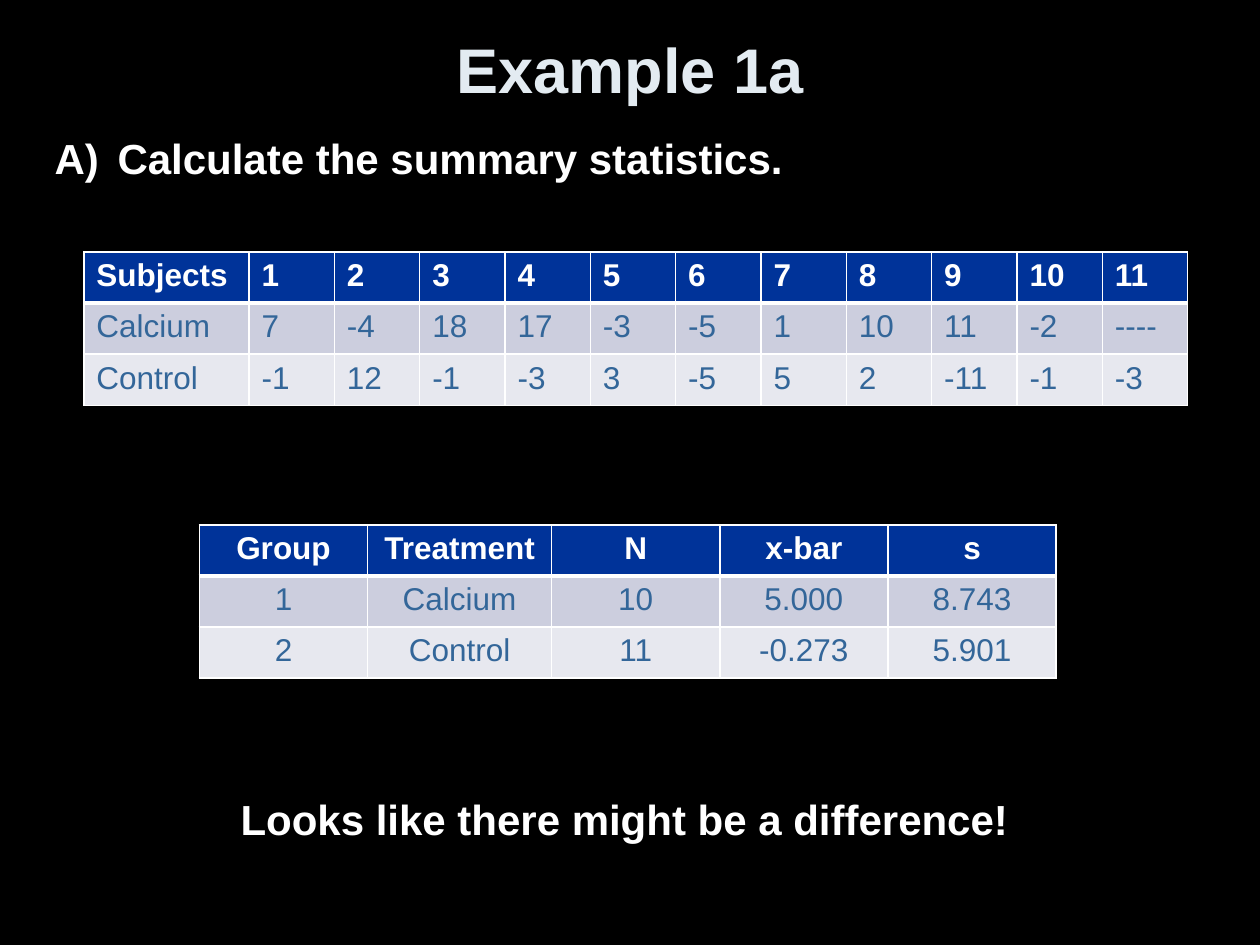
from dataclasses import dataclass

from lxml.etree import SubElement
from pptx import Presentation
from pptx.dml.color import RGBColor
from pptx.enum.text import MSO_ANCHOR as Anchor, MSO_AUTO_SIZE as AutoSize, PP_ALIGN as Align
from pptx.oxml.ns import qn
from pptx.util import Cm, Pt


@dataclass(frozen=True)
class Theme:
    font: str = "Arial"
    background: str = "000000"
    title: str = "E3EBF1"
    white: str = "FFFFFF"
    header_fill: str = "003399"
    body_text: str = "336699"
    bands: tuple = ("CCCEDE", "E7E8EF")
    title_size: int = 36
    text_size: int = 24
    table_size: int = 18
    border: int = 1
    header_rule: int = 3


@dataclass(frozen=True)
class TableSpec:
    left: float
    top: float
    widths: list
    rows: list
    align: Align


THEME = Theme()
ROW_HEIGHT = 1.03

TABLES = [
    TableSpec(1.69, 5.08, [3.33] + [1.72] * 11, [
        ["Subjects", *map(str, range(1, 12))],
        ["Calcium", "7", "-4", "18", "17", "-3", "-5", "1", "10", "11", "-2", "----"],
        ["Control", "-1", "12", "-1", "-3", "3", "-5", "5", "2", "-11", "-1", "-3"],
    ], Align.LEFT),
    TableSpec(4.02, 10.58, [3.39, 3.71, 3.39, 3.39, 3.39], [
        ["Group", "Treatment", "N", "x-bar", "s"],
        ["1", "Calcium", "10", "5.000", "8.743"],
        ["2", "Control", "11", "-0.273", "5.901"],
    ], Align.CENTER),
]


def write(text_frame, text: str, size: int, color: str, bold: bool = True,
          align: Align = Align.LEFT):
    """Fill the first paragraph of a text frame and format it."""
    paragraph = text_frame.paragraphs[0]
    paragraph.alignment = align
    run = paragraph.add_run()
    run.text = text
    for name, value in {"name": THEME.font, "size": Pt(size), "bold": bold}.items():
        setattr(run.font, name, value)
    run.font.color.rgb = RGBColor.from_string(color)
    return paragraph


def add_text(slide, box: tuple, text: str, wrap: bool):
    shape = slide.shapes.add_textbox(*map(Cm, box))
    shape.text_frame.word_wrap = wrap
    shape.text_frame.auto_size = AutoSize.NONE if wrap else AutoSize.SHAPE_TO_FIT_TEXT
    return write(shape.text_frame, text, THEME.text_size, THEME.white)


def number_with_letter(paragraph, indent: float) -> None:
    """Give the paragraph a hanging A) number."""
    properties = paragraph._p.get_or_add_pPr()
    properties.set("marL", str(Cm(indent)))
    properties.set("indent", str(-Cm(indent)))
    SubElement(properties, qn("a:buFont"), typeface=THEME.font)
    SubElement(properties, qn("a:buAutoNum"), type="alphaUcParenR")


def set_borders(cell, row: int) -> None:
    thick_sides = {0: "B", 1: "T"}
    for side in "LRTB":
        width = THEME.header_rule if thick_sides.get(row) == side else THEME.border
        line = SubElement(cell._tc.get_or_add_tcPr(), qn(f"a:ln{side}"), w=str(Pt(width)))
        SubElement(SubElement(line, qn("a:solidFill")), qn("a:srgbClr"), val=THEME.white)


def add_data_table(slide, spec: TableSpec) -> None:
    size = len(spec.rows), len(spec.widths)
    frame = slide.shapes.add_table(*size, Cm(spec.left), Cm(spec.top),
                                   Cm(sum(spec.widths)), Cm(ROW_HEIGHT * size[0]))
    table = frame.table
    for column, width in zip(table.columns, spec.widths):
        column.width = Cm(width)
    for row, values in enumerate(spec.rows):
        table.rows[row].height = Cm(ROW_HEIGHT)
        header = row == 0
        fill = THEME.header_fill if header else THEME.bands[row - 1]
        color = THEME.white if header else THEME.body_text
        for column, value in enumerate(values):
            cell = table.cell(row, column)
            set_borders(cell, row)
            cell.fill.solid()
            cell.fill.fore_color.rgb = RGBColor.from_string(fill)
            write(cell.text_frame, value, THEME.table_size, color, header, spec.align)


def main() -> None:
    presentation = Presentation()
    presentation.slide_width, presentation.slide_height = Cm(25.4), Cm(19.05)
    slide = presentation.slides.add_slide(presentation.slide_layouts[5])
    slide.background.fill.solid()
    slide.background.fill.fore_color.rgb = RGBColor.from_string(THEME.background)

    # Title
    title = slide.shapes.title
    place = {"left": 1.27, "top": 0.2, "width": 22.86, "height": 2.34}
    for name, value in place.items():
        setattr(title, name, Cm(value))
    title.text_frame.vertical_anchor = Anchor.MIDDLE
    write(title.text_frame, "Example 1a", THEME.title_size, THEME.title, align=Align.CENTER)

    # Task
    task = add_text(slide, (0.85, 2.54, 23.7, 2.12), "Calculate the summary statistics.", True)
    number_with_letter(task, 1.27)

    # Observations and summary statistics
    for spec in TABLES:
        add_data_table(slide, spec)

    # Conclusion
    add_text(slide, (4.6, 15.88, 16.13, 1.28), "Looks like there might be a difference!", False)

    presentation.save("out.pptx")


if __name__ == "__main__":
    main()
